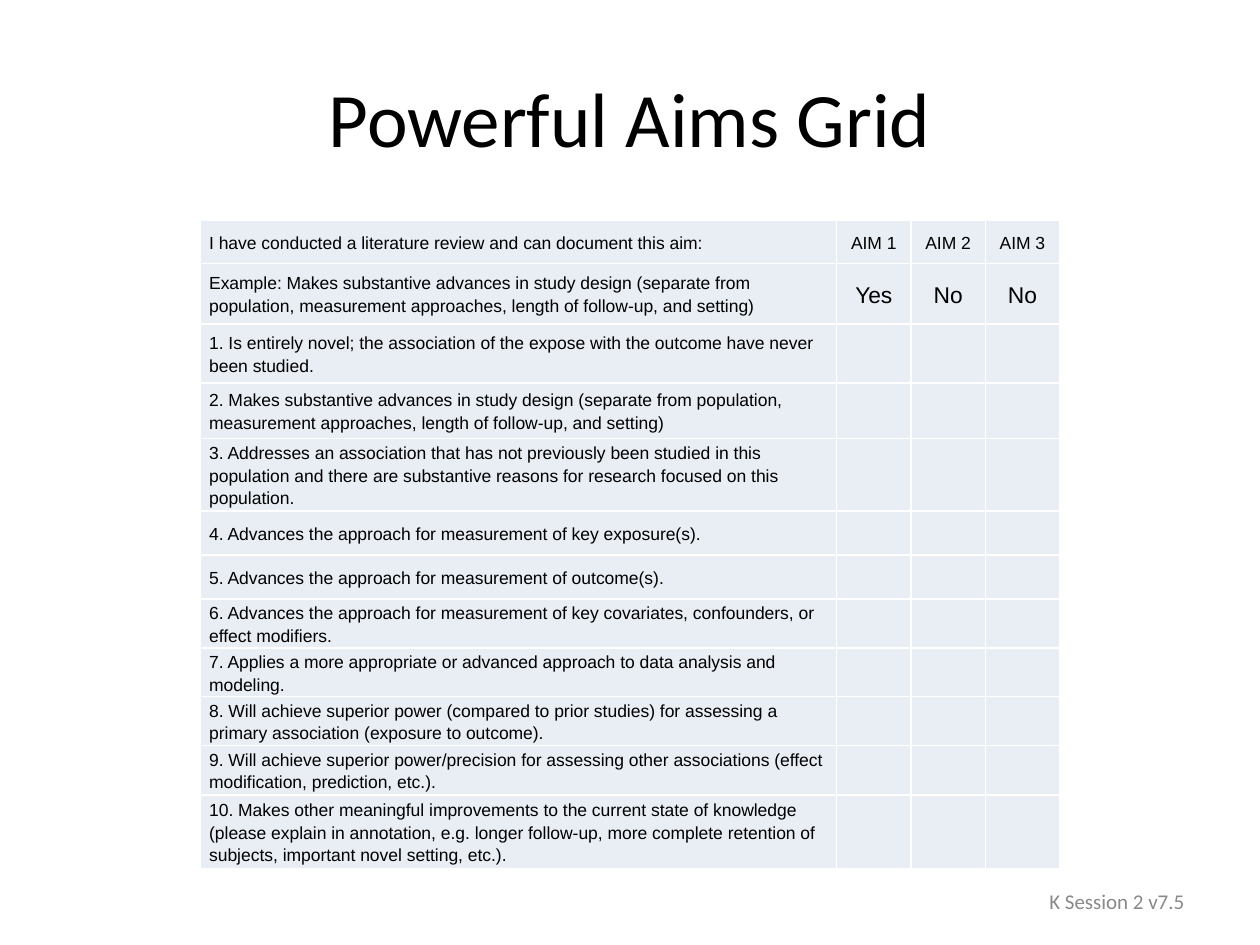
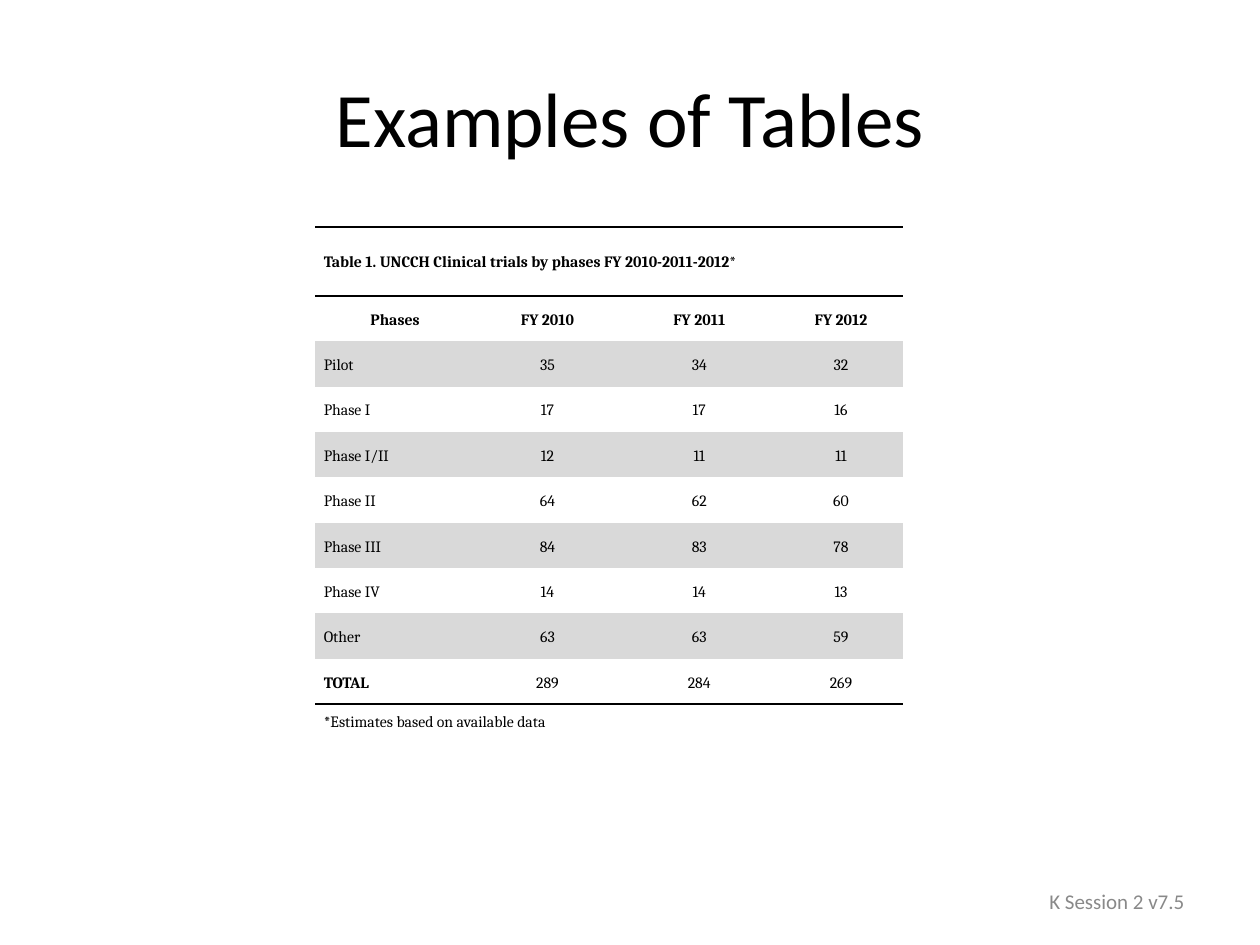
import pptx
import pptx.util
import pptx.dml.color
import pptx.enum.text
import pptx.oxml.ns
import lxml.etree

INK = {"black": "000000", "white": "FFFFFF", "note": "898989",
       "pale": "E9EDF4", "band": "D9D9D9"}
WIDE, HIGH = 10, 7.5
FOOT = "K Session 2 v7.5"
BARE = "{2D5ABB26-0587-4C30-8999-92F81FD0307C}"

AIMS = [
    ["I have conducted a literature review and can document this aim:",
     "AIM 1", "AIM 2", "AIM 3"],
    ["Example: Makes substantive advances in study design (separate from "
     "population, measurement approaches, length of follow-up, and setting)",
     "Yes", "No", "No"],
]
GOALS = [
    "Is entirely novel; the association of the expose with the outcome "
    "have never been studied.",
    "Makes substantive advances in study design (separate from population, "
    "measurement approaches, length of follow-up, and setting)",
    "Addresses an association that has not previously been studied in this "
    "population and there are substantive reasons for research focused on "
    "this population.",
    "Advances the approach for measurement of key exposure(s).",
    "Advances the approach for measurement of outcome(s).",
    "Advances the approach for measurement of key covariates, confounders, "
    "or effect modifiers.",
    "Applies a more appropriate or advanced approach to data analysis and "
    "modeling.",
    "Will achieve superior power (compared to prior studies) for assessing "
    "a primary association (exposure to outcome).",
    "Will achieve superior power/precision for assessing other associations "
    "(effect modification, prediction, etc.).",
    "Makes other meaningful improvements to the current state of knowledge "
    "(please explain in annotation, e.g. longer follow-up, more complete "
    "retention of subjects, important novel setting, etc.).",
]
AIMS += [[f"{num}. {goal}", "", "", ""] for num, goal in enumerate(GOALS, 1)]
AIM_COLS = [5.05] + [0.59] * 3
AIM_ROWS = [0.34, 0.48, 0.47, 0.44, 0.41, 0.35, 0.35, 0.39, 0.35, 0.39, 0.39,
            0.59]

TRIALS = [
    ["Table 1. UNCCH Clinical trials by phases FY 2010-2011-2012*"],
    ["Phases", "FY 2010", "FY 2011", "FY 2012"],
    ["Pilot", "35", "34", "32"],
    ["Phase I", "17", "17", "16"],
    ["Phase I/II", "12", "11", "11"],
    ["Phase II", "64", "62", "60"],
    ["Phase III", "84", "83", "78"],
    ["Phase IV", "14", "14", "13"],
    ["Other", "63", "63", "59"],
    ["TOTAL", "289", "284", "269"],
    ["*Estimates based on available data"],
]
TRIAL_COLS = [1.27, 1.15, 1.26, 0.99]
TRIAL_ROWS = [0.55] + [0.36] * 9 + [0.27]
RULED = {0: "TB", 1: "T", 9: "B", 10: "T"}


def write(frame, text, font="Calibri", size=12, ink="black", bold=False,
          align="LEFT", lead=None):
    para = frame.paragraphs[0]
    para.alignment = getattr(pptx.enum.text.PP_ALIGN, align)
    para.line_spacing = lead
    run = para.add_run()
    run.text = text
    run.font.name = font
    run.font.size = pptx.util.Pt(size)
    run.font.bold = bold
    run.font.color.rgb = pptx.dml.color.RGBColor.from_string(INK[ink])


def edge(cell, sides, ink):
    props = cell._tc.get_or_add_tcPr()
    name = pptx.oxml.ns.qn
    for side in "LRTB":
        line = lxml.etree.SubElement(props, name("a:ln" + side), w="12700")
        if side in sides:
            fill = lxml.etree.SubElement(line, name("a:solidFill"))
            lxml.etree.SubElement(fill, name("a:srgbClr"), val=INK[ink])
        else:
            lxml.etree.SubElement(line, name("a:noFill"))


def paint(cell, fill):
    if fill:
        cell.fill.solid()
        cell.fill.fore_color.rgb = pptx.dml.color.RGBColor.from_string(INK[fill])
    else:
        cell.fill.background()


def grid(slide, left, top, cols, rows, data, style):
    inch = pptx.util.Inches
    table = slide.shapes.add_table(
        len(rows), len(cols), inch(left), inch(top),
        inch(sum(cols)), inch(sum(rows))).table
    table.first_row = table.horz_banding = False
    table._tbl.tblPr.find(pptx.oxml.ns.qn("a:tableStyleId")).text = BARE
    for col, width in zip(table.columns, cols):
        col.width = inch(width)
    for row, height in zip(table.rows, rows):
        row.height = inch(height)
    for r, texts in enumerate(data):
        if len(texts) == 1:
            table.cell(r, 0).merge(table.cell(r, len(cols) - 1))
        for c in range(len(cols)):
            cell = table.cell(r, c)
            look, sides, ink, fill = style(r, c)
            edge(cell, sides, ink)
            paint(cell, fill)
            cell.vertical_anchor = pptx.enum.text.MSO_ANCHOR.MIDDLE
            cell.margin_left = cell.margin_right = inch(0.07)
            cell.margin_top = cell.margin_bottom = 0
            if c < len(texts):
                write(cell.text_frame, texts[c], lead=1.15, **look)


def aim_style(r, c):
    look = {"font": "Arial", "size": 13 if r == 1 and c else 10,
            "align": "CENTER" if c else "LEFT"}
    return look, "LRTB", "white", "pale"


def trial_style(r, c):
    look = {"font": "Cambria", "size": 9,
            "bold": r < 2 or (r == 9 and c == 0),
            "align": "CENTER" if c or r == 1 else "LEFT"}
    fill = "band" if r in range(2, 9, 2) else None
    return look, RULED.get(r, ""), "black", fill


def page(deck, title):
    inch = pptx.util.Inches
    slide = deck.slides.add_slide(deck.slide_layouts[5])
    head = slide.shapes.title
    head.left, head.top = inch(WIDE * 0.05), inch(HIGH * 0.04)
    head.width, head.height = inch(WIDE * 0.9), inch(1.25)
    write(head.text_frame, title, size=44, align="CENTER")
    foot = slide.shapes.add_textbox(
        inch(6.33), inch(6.95), inch(3.17), inch(0.4)).text_frame
    foot.word_wrap = True
    foot.vertical_anchor = pptx.enum.text.MSO_ANCHOR.MIDDLE
    write(foot, FOOT, ink="note", align="RIGHT")
    return slide


def main():
    deck = pptx.Presentation()
    deck.slide_width = pptx.util.Inches(WIDE)
    deck.slide_height = pptx.util.Inches(HIGH)
    grid(page(deck, "Powerful Aims Grid"), 1.59, 1.75,
         AIM_COLS, AIM_ROWS, AIMS, aim_style)
    grid(page(deck, "Examples of Tables"), 2.5, 1.8,
         TRIAL_COLS, TRIAL_ROWS, TRIALS, trial_style)
    deck.save("out.pptx")


if __name__ == "__main__":
    main()
